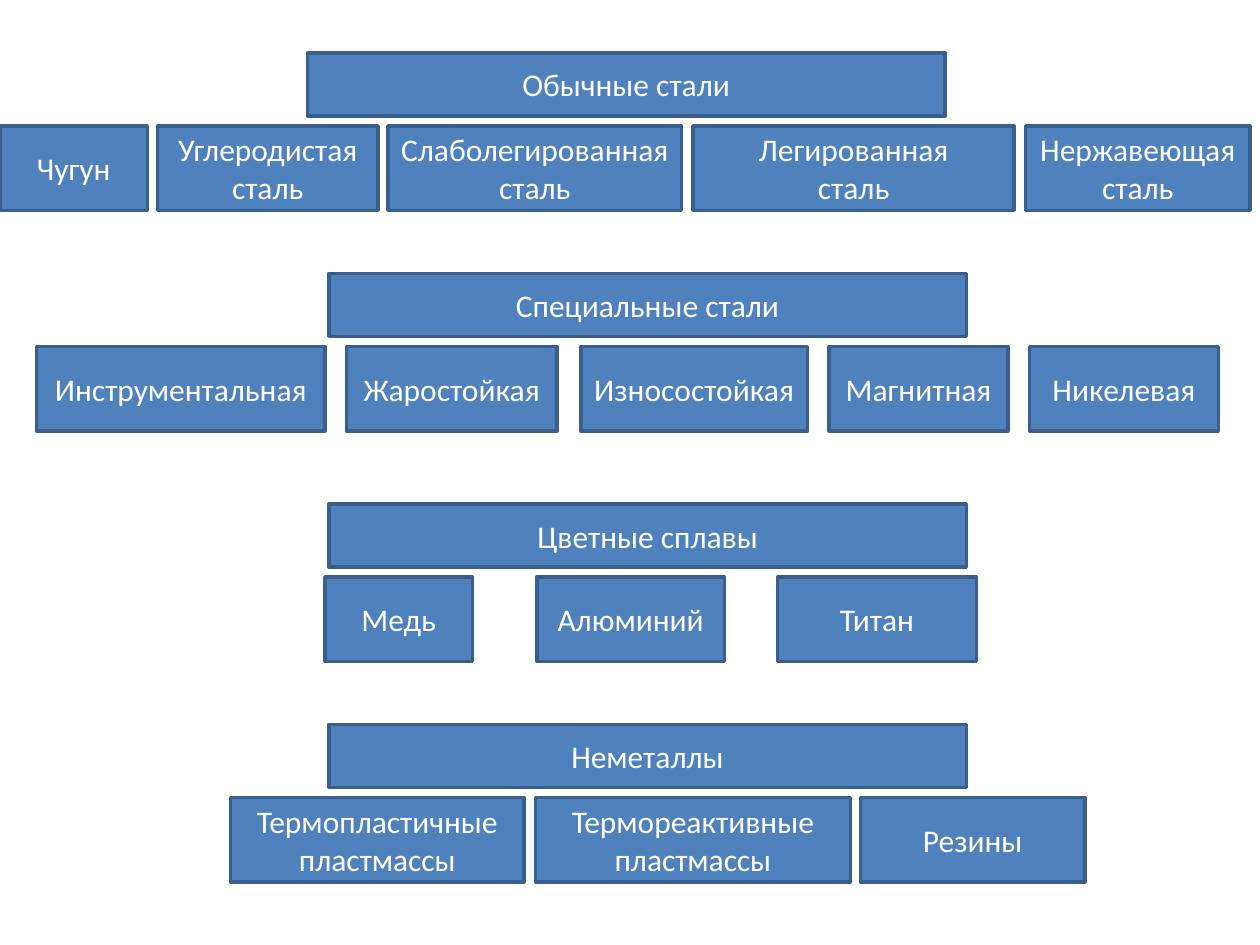
from pptx import Presentation
from pptx.dml.color import RGBColor
from pptx.enum.shapes import MSO_SHAPE
from pptx.enum.text import MSO_ANCHOR, PP_ALIGN
from pptx.util import Inches, Pt

RECTANGLE = MSO_SHAPE.RECTANGLE
MIDDLE = MSO_ANCHOR.MIDDLE
CENTER = PP_ALIGN.CENTER

BLUE = RGBColor(0x4F, 0x81, 0xBD)
DARK_BLUE = RGBColor(0x3A, 0x5F, 0x8C)
WHITE = RGBColor(0xFF, 0xFF, 0xFF)

HEADER_WIDTH, HEADER_HEIGHT = 5.06, 0.5
MATERIAL_HEIGHT = 0.67
MATERIAL_OFFSET = 0.58  # from the top of a header to its materials

# Each group: header, left, top, materials as (lines, left, width)
GROUPS = [
    ("Обычные стали", 2.44, 0.42, [
        (["Чугун"], 0, 1.17),
        (["Углеродистая сталь"], 1.25, 1.75),
        (["Слаболегированная сталь"], 3.08, 2.33),
        (["Легированная", "сталь"], 5.5, 2.55),
        (["Нержавеющая", "сталь"], 8.14, 1.78),
    ]),
    ("Специальные стали", 2.61, 2.17, [
        (["Инструментальная"], 0.29, 2.29),
        (["Жаростойкая"], 2.75, 1.67),
        (["Износостойкая"], 4.61, 1.8),
        (["Магнитная"], 6.58, 1.42),
        (["Никелевая"], 8.17, 1.5),
    ]),
    ("Цветные сплавы", 2.61, 4, [
        (["Медь"], 2.58, 1.17),
        (["Алюминий"], 4.26, 1.49),
        (["Титан"], 6.17, 1.58),
    ]),
    ("Неметаллы", 2.61, 5.75, [
        (["Термопластичные пластмассы"], 1.83, 2.33),
        (["Термореактивные", "пластмассы"], 4.25, 2.5),
        (["Резины"], 6.83, 1.78),
    ]),
]


class SlideBuilder:
    """Holds the box style and the current slide."""

    font_name = "Calibri"
    font_size = Pt(18)
    line_width = Pt(2)

    def __init__(self, slide):
        self.slide = slide

    def box(self, lines, left, top, width, height):
        shape = self.slide.shapes.add_shape(
            RECTANGLE, Inches(left), Inches(top), Inches(width), Inches(height))
        shape.shadow.inherit = False
        shape.fill.solid()
        shape.fill.fore_color.rgb = BLUE
        shape.line.color.rgb = DARK_BLUE
        shape.line.width = self.line_width
        frame = shape.text_frame
        frame.word_wrap = True
        frame.vertical_anchor = MIDDLE
        for index, line in enumerate(lines):
            paragraph = frame.add_paragraph() if index else frame.paragraphs[0]
            self.text(paragraph, line)

    def text(self, paragraph, line):
        paragraph.alignment = CENTER
        run = paragraph.add_run()
        run.text = line
        run.font.name = self.font_name
        run.font.size = self.font_size
        run.font.color.rgb = WHITE


def main():
    presentation = Presentation()
    presentation.slide_width = Inches(10)
    presentation.slide_height = Inches(7.5)
    blank_layout = presentation.slide_layouts[6]
    builder = SlideBuilder(presentation.slides.add_slide(blank_layout))

    for header, header_left, top, materials in GROUPS:
        # Materials of the group
        for lines, left, width in materials:
            builder.box(lines, left, top + MATERIAL_OFFSET, width, MATERIAL_HEIGHT)
        # Group header
        builder.box([header], header_left, top, HEADER_WIDTH, HEADER_HEIGHT)

    presentation.save("out.pptx")


if __name__ == "__main__":
    main()
